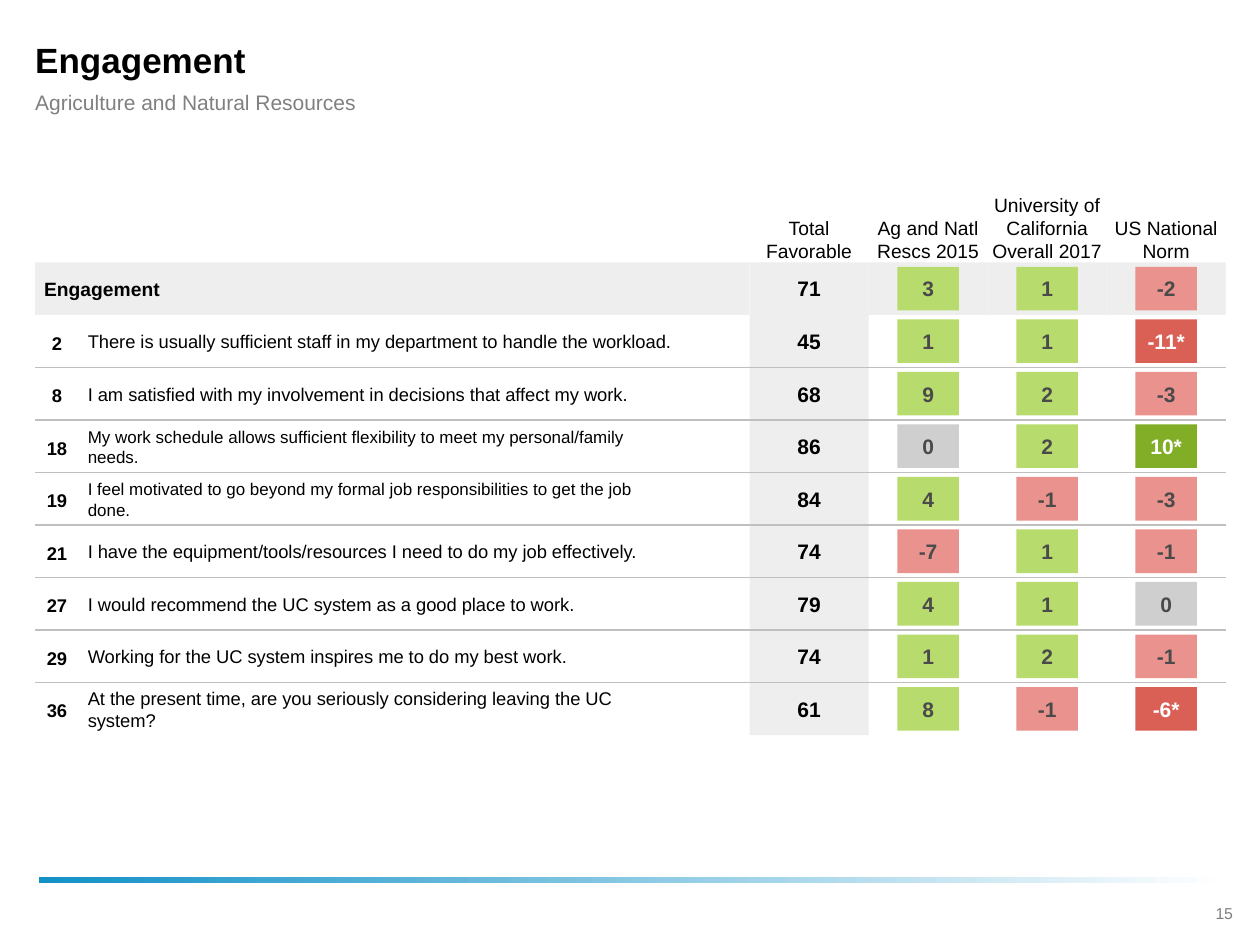
from lxml import etree
from pptx import Presentation
from pptx.dml.color import RGBColor
from pptx.enum import shapes, text
from pptx.oxml import ns
from pptx.util import Cm, Pt

COLORS = {
    "black": "000000", "white": "FFFFFF", "band": "EEEEEE", "rule": "BFBFBF",
    "muted": "808080", "page": "7F7F7F", "accent": "1291C7", "chip text": "4A4A4A",
    "above": "B7DB6C", "well above": "81AD27", "equal": "CFCFCF",
    "below": "E9928E", "well below": "DA6056",
}
LEFT, WIDTH = 0.71, 24
ALIGN, ANCHOR = text.PP_ALIGN, text.MSO_ANCHOR

HEADERS = ["Total Favorable", "Ag and Natl Rescs 2015",
           "University of California Overall 2017", "US National Norm"]
SUMMARY = ("Engagement", "71", ["3", "1", "-2"])
QUESTIONS = [  # number, question, size, total, differences
    ("2", "There is usually sufficient staff in my department to handle the workload.",
     10.5, "45", ["1", "1", "-11*"]),
    ("8", "I am satisfied with my involvement in decisions that affect my work.",
     10.5, "68", ["9", "2", "-3"]),
    ("18", "My work schedule allows sufficient flexibility to meet my personal/family needs.",
     9.7, "86", ["0", "2", "10*"]),
    ("19", "I feel motivated to go beyond my formal job responsibilities to get the job done.",
     9.7, "84", ["4", "-1", "-3"]),
    ("21", "I have the equipment/tools/resources I need to do my job effectively.",
     10.5, "74", ["-7", "1", "-1"]),
    ("27", "I would recommend the UC system as a good place to work.",
     10.5, "79", ["4", "1", "0"]),
    ("29", "Working for the UC system inspires me to do my best work.",
     10.5, "74", ["1", "2", "-1"]),
    ("36", "At the present time, are you seriously considering leaving the UC system?",
     10.5, "61", ["8", "-1", "-6*"]),
]


def rgb(name):
    return RGBColor.from_string(COLORS[name])


def write(sp, words, size, color="black", bold=False, align=ALIGN.CENTER,
          anchor=ANCHOR.MIDDLE, insets=(0, 0, 0, 0), wrap=True):
    """Put one formatted paragraph in a shape; insets run left, top, right, bottom."""
    tf = sp.text_frame
    sides = zip(("left", "top", "right", "bottom"), insets)
    frame = {f"margin_{side}": Cm(inset) for side, inset in sides}
    frame.update(auto_size=text.MSO_AUTO_SIZE.NONE, word_wrap=wrap, vertical_anchor=anchor)
    for name, value in frame.items():
        setattr(tf, name, value)
    p = tf.paragraphs[0]
    p.alignment, p.space_before = align, Pt(0)
    r = p.add_run()
    r.text = words
    for name, value in {"name": "Arial", "size": Pt(size), "bold": bold}.items():
        setattr(r.font, name, value)
    r.font.color.rgb = rgb(color)
    return p


def add_label(s, box, words, size, **style):
    sp = s.shapes.add_textbox(*map(Cm, box))
    write(sp, words, size, **style)
    return sp


def add_rect(s, box, color):
    sp = s.shapes.add_shape(shapes.MSO_SHAPE.RECTANGLE, *map(Cm, box))
    sp.shadow.inherit = False
    sp.line.fill.background()
    sp.fill.solid()
    sp.fill.fore_color.rgb = rgb(color)
    return sp


def add_rule(s, x, y, width):
    line = s.shapes.add_connector(shapes.MSO_CONNECTOR.STRAIGHT, Cm(x), Cm(y), Cm(x + width), Cm(y))
    line.line.color.rgb = rgb("rule")
    line.line.width = Pt(0.75)
    etree.SubElement(line._element.spPr, ns.qn("a:effectLst"))


def add_chip(s, x, y, width, height, value):
    """Centre a difference chip in its cell, coloured by sign and significance."""
    marked = value.endswith("*")
    number = int(value.rstrip("*"))
    color = "equal" if number == 0 else "above" if number > 0 else "below"
    chip_w, chip_h = 1.24, 0.88
    box = (x + (width - chip_w) / 2, y + (height - chip_h) / 2, chip_w, chip_h)
    sp = add_rect(s, box, f"well {color}" if marked else color)
    write(sp, value, 12, "white" if marked else "chip text", True,
          insets=(0, 0.13, 0, 0.13), wrap=False)


def fill_headings(s, x, y, width):
    title, body = s.placeholders
    style = {"align": ALIGN.LEFT, "insets": (0, 0, 0.89, 0)}
    for sp, top, height in ((title, y, 0.97), (body, y + 1.09, 0.53)):
        sp.left, sp.top, sp.width, sp.height = map(Cm, (x, top, width, height))
    write(title, "Engagement", 20, bold=True, **style)
    p = write(body, "Agriculture and Natural Resources", 12, "muted", **style)
    pPr = p._p.get_or_add_pPr()
    pPr.set("marL", "0")
    pPr.set("indent", "0")
    etree.SubElement(pPr, ns.qn("a:buNone"))


def add_scores(s, x, y, width, height, header_height):
    """Score grid whose first row starts at y, with column headers above it."""
    col, row = width / 10, height / (len(QUESTIONS) + 1)
    label_w = width - len(HEADERS) * col
    columns = [x + label_w + i * col for i in range(len(HEADERS))]
    tops = [y + i * row for i in range(len(QUESTIONS) + 1)]

    for top in tops[1:]:
        add_rect(s, (columns[0], top, col, row), "band")
    add_rect(s, (x, y, label_w, row), "band")
    for left in columns:
        add_rect(s, (left, y, col, row), "band")

    for left, header in zip(columns, HEADERS):
        add_label(s, (left, y - header_height, col, header_height), header, 11,
                  anchor=ANCHOR.BOTTOM)

    def add_values(top, total, differences):
        add_label(s, (columns[0], top + (row - 0.48) / 2, col, 0.48), total, 12, bold=True)
        for left, value in zip(columns[1:], differences):
            add_chip(s, left, top, col, row, value)

    name, total, differences = SUMMARY
    add_label(s, (x, y, label_w, row), name, 11, bold=True, align=ALIGN.LEFT,
              insets=(0.18, 0, 0.18, 0))
    add_values(y, total, differences)

    for top, (number, question, size, total, differences) in zip(tops[1:], QUESTIONS):
        add_label(s, (x, top + 0.28, 0.88, 0.56), number, 10.5, bold=True)
        add_label(s, (x + 0.88, top + 0.13, 12.95, 0.81), question, size, align=ALIGN.LEFT,
                  insets=(0.18, 0, 0.89, 0))
        add_values(top, total, differences)
        if top != tops[-1]:
            add_rule(s, x, top + row, width)


def add_footer(s, x, y, width):
    bar = add_rect(s, (x, y, width, 0.12), "accent")
    bar.fill.gradient()
    bar.fill.gradient_angle = 0
    for stop, color, position in zip(bar.fill.gradient_stops, ("accent", "white"), (0, 1)):
        stop.color.rgb = rgb(color)
        stop.position = position
    page = add_label(s, (x + 23.24, y + 0.4, 1.32, 0.64), "15", 9, color="page",
                     anchor=ANCHOR.TOP, insets=(0.25, 0.13, 0.25, 0.13))
    page.text_frame.auto_size = text.MSO_AUTO_SIZE.SHAPE_TO_FIT_TEXT


def main():
    prs = Presentation()
    prs.slide_width, prs.slide_height = Cm(25.4), Cm(19.05)
    s = prs.slides.add_slide(prs.slide_layouts[1])
    add_footer(s, 0.78, 17.69, 23.93)
    fill_headings(s, LEFT, 0.71, WIDTH)
    add_scores(s, LEFT, 5.29, WIDTH, 9.53, 2.82)
    prs.save("out.pptx")


if __name__ == "__main__":
    main()
